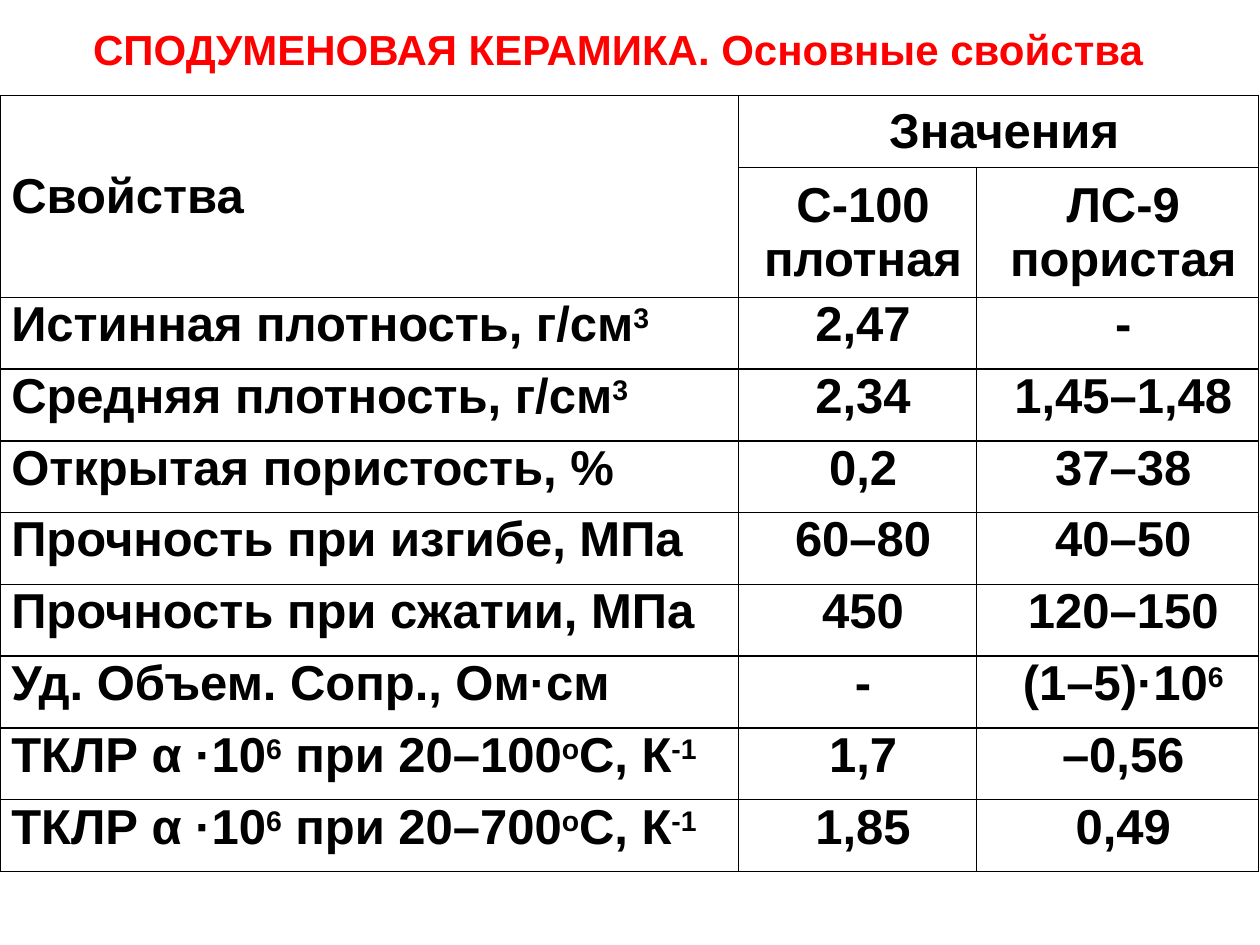
from pptx import Presentation
from pptx.dml.color import RGBColor as RGB
from pptx.enum.text import MSO_ANCHOR as Anchor, PP_ALIGN as Align
from pptx.oxml import parse_xml
from pptx.oxml.ns import nsdecls
from pptx.util import Inches, Pt

RED = RGB(0xFF, 0, 0)
BLACK = RGB(0, 0, 0)
FONT = "Arial"
INDENT = Inches(0.09)

# Content: text between ^ marks is raised, a line break starts a new paragraph
TITLE = "СПОДУМЕНОВАЯ КЕРАМИКА. Основные свойства"
HEAD = [
    ("Свойства", "Значения", ""),
    ("", "С-100\nплотная", "ЛС-9\nпористая"),
]
BODY = [
    ("Истинная плотность, г/см^3^", "2,47", "-"),
    ("Средняя плотность, г/см^3^", "2,34", "1,45–1,48"),
    ("Открытая пористость, %", "0,2", "37–38"),
    ("Прочность при изгибе, МПа", "60–80", "40–50"),
    ("Прочность при сжатии, МПа", "450", "120–150"),
    ("Уд. Объем. Сопр., Ом·см", "-", "(1–5)·10^6^"),
    ("ТКЛР α ·10^6^ при 20–100^о^С, К^-1^", "1,7", "–0,56"),
    ("ТКЛР α ·10^6^ при 20–700^о^С, К^-1^", "1,85", "0,49"),
]
ROWS = HEAD + BODY
COLS = [5.86, 1.89, 2.24]
HIGH = [0.57, 1.03] + [0.57] * len(BODY)


def style(para, size, color):
    font = para.font
    font.name, font.size, font.bold = FONT, Pt(size), True
    font.color.rgb = color


def write(frame, text, align):
    for i, line in enumerate(text.split("\n")):
        para = frame.add_paragraph() if i else frame.paragraphs[0]
        para.alignment = align
        style(para, 28, BLACK)
        for j, part in enumerate(line.split("^")):
            if part:
                run = para.add_run()
                run.text = part
                if j % 2:
                    run.font._element.set("baseline", "26000")


def border(cell):
    props = cell._tc.get_or_add_tcPr()
    for i, side in enumerate("LRTB"):
        props.insert(i, parse_xml(
            f'<a:ln{side} {nsdecls("a")} w="{Pt(1)}"><a:solidFill>'
            f'<a:srgbClr val="{BLACK}"/></a:solidFill></a:ln{side}>'))


deck = Presentation()
deck.slide_width, deck.slide_height = Inches(10), Inches(7.5)
slide = deck.slides.add_slide(deck.slide_layouts[6])

# Title
box = slide.shapes.add_textbox(Inches(0.33), Inches(0.19), Inches(9.67), Inches(0.4))
frame = box.text_frame
frame.word_wrap = True
frame.margin_left = Inches(0.41)
frame.margin_right = frame.margin_top = frame.margin_bottom = 0
frame.text = TITLE
style(frame.paragraphs[0], 24, RED)

# Table of properties
table = slide.shapes.add_table(
    len(ROWS), len(COLS), 0, Inches(0.76),
    Inches(sum(COLS)), Inches(sum(HIGH))).table
table.first_row = table.horz_banding = False
for col, wide in zip(table.columns, COLS):
    col.width = Inches(wide)
for row, high in zip(table.rows, HIGH):
    row.height = Inches(high)

for r, row in enumerate(ROWS):
    for c, text in enumerate(row):
        cell = table.cell(r, c)
        cell.fill.background()
        border(cell)
        cell.margin_left = INDENT
        cell.margin_right = cell.margin_top = cell.margin_bottom = 0
        cell.vertical_anchor = Anchor.MIDDLE if r < len(HEAD) else Anchor.TOP
        write(cell.text_frame, text, Align.CENTER if c else Align.LEFT)

# Joined header cells
table.cell(0, 0).merge(table.cell(1, 0))
table.cell(0, 1).merge(table.cell(0, 2))

deck.save("out.pptx")
